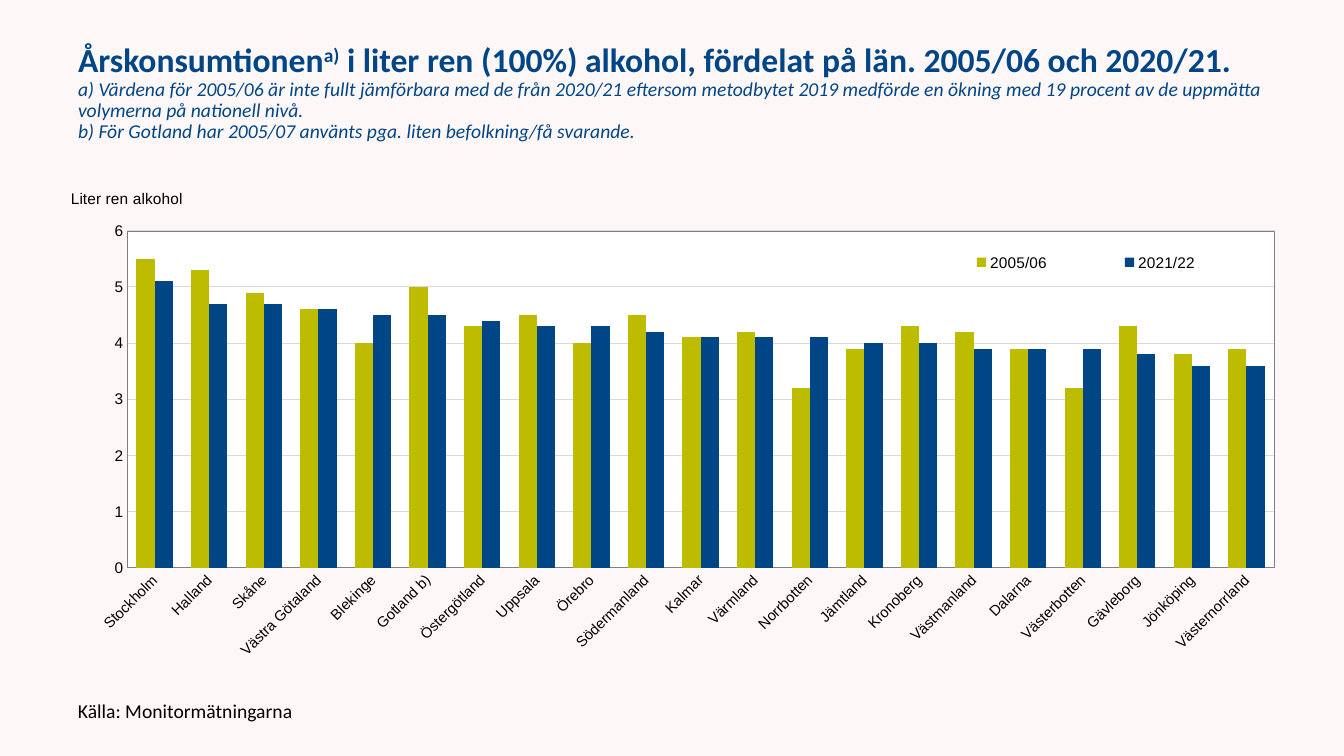
from dataclasses import dataclass

from lxml.etree import _Element as Element
from pptx import Presentation
from pptx.chart.chart import Chart
from pptx.chart.data import CategoryChartData
from pptx.dml.color import RGBColor
from pptx.enum.chart import XL_CHART_TYPE as ChartType
from pptx.enum.chart import XL_LEGEND_POSITION as LegendPosition
from pptx.enum.chart import XL_TICK_MARK as TickMark
from pptx.enum.text import MSO_ANCHOR as Anchor
from pptx.enum.text import MSO_AUTO_SIZE as AutoSize
from pptx.enum.text import PP_ALIGN as Align
from pptx.oxml import parse_xml
from pptx.oxml.ns import nsdecls
from pptx.slide import Slide
from pptx.util import Emu, Pt

PX = 914400 / 100.8
NAVY = RGBColor(0x00, 0x46, 0x87)
OLIVE = RGBColor(0xBE, 0xBC, 0x00)
BLACK = RGBColor(0x00, 0x00, 0x00)
GREY = RGBColor(0x80, 0x80, 0x80)
LIGHT_GREY = RGBColor(0xD9, 0xD9, 0xD9)
WHITE = RGBColor(0xFF, 0xFF, 0xFF)
BLUSH = RGBColor(0xFE, 0xF7, 0xF7)

HEADING = {"size": Pt(24), "name": "Calibri", "bold": True}
NOTE = {"size": Pt(14), "name": "Calibri", "bold": False, "italic": True}
SOURCE = {"size": Pt(14), "name": "Calibri"}
CHART_FONT = {"size": Pt(11), "name": "Arial", "bold": False}
COUNTY_FONT = CHART_FONT | {"size": Pt(10.5)}


@dataclass(frozen=True)
class Box:
    left: int
    top: int
    width: int
    height: int

    def emu(self) -> list[Emu]:
        return [px(n) for n in (self.left, self.top, self.width, self.height)]


@dataclass(frozen=True)
class Phrase:
    text: str
    style: dict
    color: RGBColor = NAVY
    superscript: bool = False


@dataclass(frozen=True)
class TextBlock:
    box: Box
    phrases: list[Phrase]


@dataclass(frozen=True)
class Series:
    name: str
    color: RGBColor
    values: list[float]


TITLE = TextBlock(Box(68, 30, 1210, 126), [
    Phrase("Årskonsumtionen", HEADING),
    Phrase("a)", HEADING, superscript=True),
    Phrase(" i liter ren (100%) alkohol, fördelat på län. 2005/06 och 2020/21. \n", HEADING),
    Phrase("a) Värdena för 2005/06 är inte fullt jämförbara med de från 2020/21 eftersom "
           "metodbytet 2019 medförde en ökning med 19 procent av de uppmätta volymerna på "
           "nationell nivå. \nb) För Gotland har 2005/07 använts pga. liten "
           "befolkning/få svarande.", NOTE),
])
FOOTER = TextBlock(Box(68, 694, 605, 37), [
    Phrase("Källa: Monitormätningarna", SOURCE, BLACK),
])
CHART_BOX = Box(68, 170, 1212, 499)
COUNTIES = [
    "Stockholm", "Halland", "Skåne", "Västra Götaland", "Blekinge", "Gotland b)",
    "Östergötland", "Uppsala", "Örebro", "Södermanland", "Kalmar", "Värmland",
    "Norrbotten", "Jämtland", "Kronoberg", "Västmanland", "Dalarna", "Västerbotten",
    "Gävleborg", "Jönköping", "Västernorrland",
]
SERIES = [
    Series("2005/06", OLIVE, [5.5, 5.3, 4.9, 4.6, 4, 5, 4.3, 4.5, 4, 4.5, 4.1, 4.2, 3.2,
                              3.9, 4.3, 4.2, 3.9, 3.2, 4.3, 3.8, 3.9]),
    Series("2021/22", NAVY, [5.1, 4.7, 4.7, 4.6, 4.5, 4.5, 4.4, 4.3, 4.3, 4.2, 4.1, 4.1,
                             4.1, 4, 4, 3.9, 3.9, 3.9, 3.8, 3.6, 3.6]),
]


def px(length: int) -> Emu:
    return Emu(round(length * PX))


def set_all(target: object, values: dict) -> None:
    for name, value in values.items():
        setattr(target, name, value)


def style_font(font: object, style: dict, color: RGBColor = BLACK) -> None:
    set_all(font, style)
    font.color.rgb = color


def fill_text(shape: object, block: TextBlock) -> None:
    set_all(shape, dict(zip(("left", "top", "width", "height"), block.box.emu())))
    set_all(shape.text_frame, {"word_wrap": True, "auto_size": AutoSize.NONE,
                               "vertical_anchor": Anchor.MIDDLE})
    paragraph = shape.text_frame.paragraphs[0]
    set_all(paragraph, {"alignment": Align.LEFT, "line_spacing": 0.9})
    for phrase in block.phrases:
        for index, line in enumerate(phrase.text.split("\n")):
            if index:
                paragraph.add_line_break()
            if line:
                run = paragraph.add_run()
                run.text = line
                style_font(run.font, phrase.style, phrase.color)
                if phrase.superscript:
                    run._r.get_or_add_rPr().set("baseline", "30000")


def place(element: Element, index: int, inner: bool = False, **fractions: float) -> None:
    for old in element.xpath("c:layout"):
        element.remove(old)
    target = '<c:layoutTarget val="inner"/>' if inner else ""
    modes = "".join(f'<c:{key}Mode val="edge"/>' for key in fractions if key in "xy")
    sizes = "".join(f'<c:{key} val="{value}"/>' for key, value in fractions.items())
    element.insert(index, parse_xml(
        f'<c:layout {nsdecls("c")}><c:manualLayout>{target}{modes}{sizes}'
        "</c:manualLayout></c:layout>"))


def style_axes(chart: Chart) -> None:
    counties, litres = chart.category_axis, chart.value_axis
    for axis, style in ((counties, COUNTY_FONT), (litres, CHART_FONT)):
        set_all(axis, {"major_tick_mark": TickMark.NONE, "minor_tick_mark": TickMark.NONE})
        style_font(axis.tick_labels.font, style)
        axis.format.line.color.rgb = GREY
        axis.format.line.width = Pt(0.25)
    counties._element.xpath("c:txPr/a:bodyPr")[0].set("rot", "-2700000")
    set_all(litres, {"minimum_scale": 0, "maximum_scale": 6, "major_unit": 1})
    set_all(litres.tick_labels, {"number_format": "0", "number_format_is_linked": False})
    litres.major_gridlines.format.line.color.rgb = LIGHT_GREY
    litres.major_gridlines.format.line.width = Pt(0.75)
    frame = litres.axis_title.text_frame
    frame.text = "Liter ren alkohol"
    style_font(frame.paragraphs[0].runs[0].font, CHART_FONT)
    frame._txBody.bodyPr.set("rot", "0")
    place(litres.axis_title._element, 1, x=0, y=0.03)


def add_consumption_chart(slide: Slide) -> None:
    data = CategoryChartData(number_format="0.0")
    data.categories = COUNTIES
    for series in SERIES:
        data.add_series(series.name, series.values)
    chart = slide.shapes.add_chart(ChartType.COLUMN_CLUSTERED, *CHART_BOX.emu(), data).chart
    set_all(chart, {"has_title": False, "has_legend": True})
    style_font(chart.font, CHART_FONT)
    style_axes(chart)
    plot = chart.plots[0]
    set_all(plot, {"gap_width": 100, "overlap": 0, "vary_by_categories": False})
    for drawn, series in zip(plot.series, SERIES):
        drawn.format.fill.solid()
        drawn.format.fill.fore_color.rgb = series.color
    set_all(chart.legend, {"position": LegendPosition.RIGHT, "include_in_layout": False})
    style_font(chart.legend.font, CHART_FONT)
    place(chart.legend._element, 1, x=0.69, y=0.15, w=0.3, h=0.07)
    area = chart._chartSpace.xpath("c:chart/c:plotArea")[0]
    place(area, 0, inner=True, x=0.049, y=0.122, w=0.946, h=0.675)
    area.append(parse_xml(
        f'<c:spPr {nsdecls("c", "a")}><a:solidFill><a:srgbClr val="{WHITE}"/></a:solidFill>'
        f'<a:ln w="3175"><a:solidFill><a:srgbClr val="{GREY}"/></a:solidFill></a:ln></c:spPr>'))


def main() -> None:
    """Build the slide on yearly alcohol consumption by county."""
    presentation = Presentation()
    set_all(presentation, {"slide_width": px(1344), "slide_height": px(756)})
    slide = presentation.slides.add_slide(presentation.slide_layouts.get_by_name("Title Only"))
    slide.background.fill.solid()
    slide.background.fill.fore_color.rgb = BLUSH
    fill_text(slide.shapes.title, TITLE)
    fill_text(slide.shapes.add_textbox(*FOOTER.box.emu()), FOOTER)
    add_consumption_chart(slide)
    presentation.save("out.pptx")


if __name__ == "__main__":
    main()
